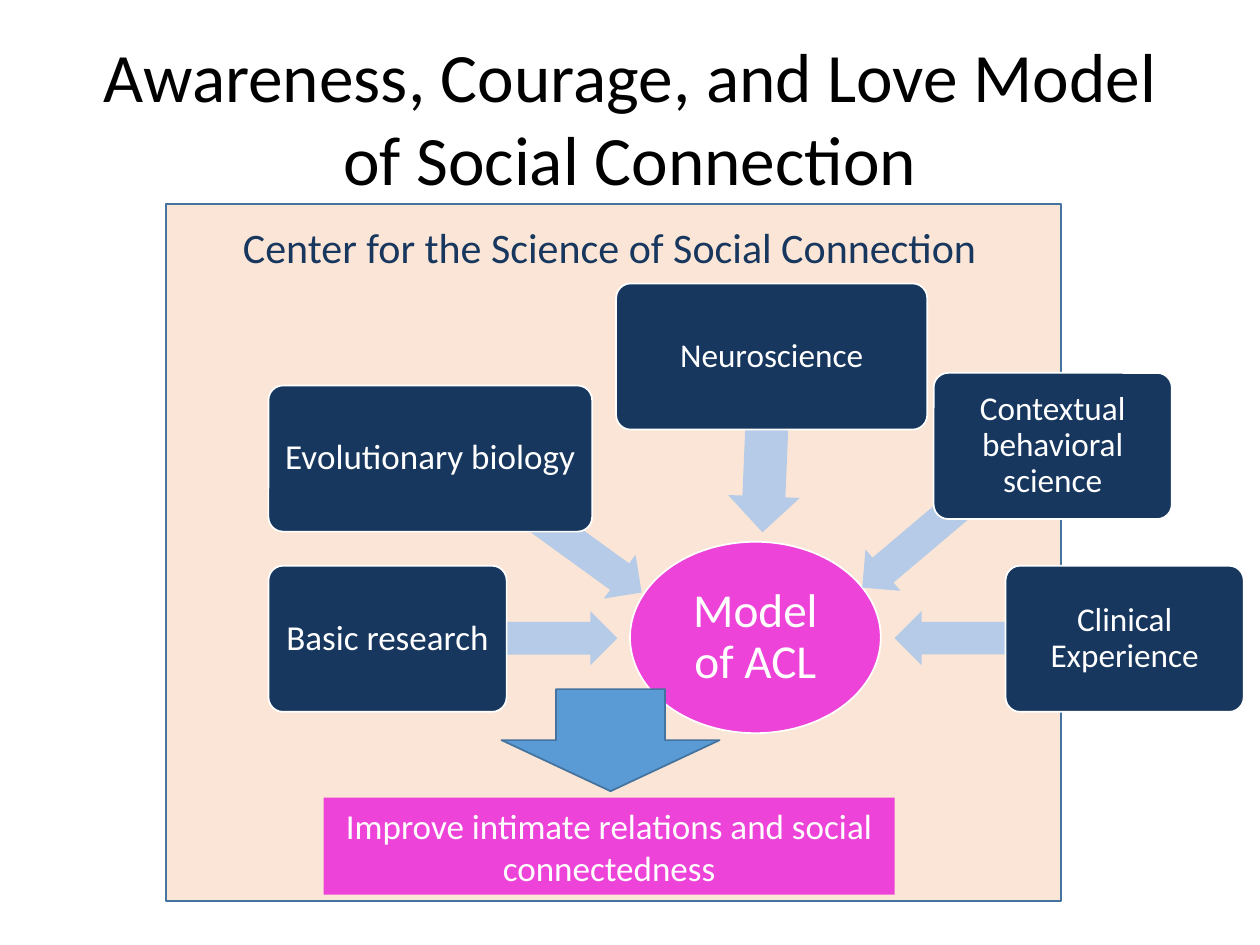
"""Builds the Awareness, Courage, and Love model slide."""
from dataclasses import dataclass

from pptx import Presentation
from pptx.dml.color import RGBColor
from pptx.enum.shapes import MSO_SHAPE
from pptx.enum.text import MSO_ANCHOR, PP_ALIGN
from pptx.util import Pt


@dataclass(frozen=True)
class Theme:
    font: str = "Calibri"
    black: str = "000000"
    white: str = "FFFFFF"
    navy: str = "17375E"
    pink: str = "ED43D9"
    peach: str = "FBE5D6"
    pale_blue: str = "B5CBE7"
    blue: str = "5B9BD5"
    outline: str = "43739E"
    title_size: float = 39.6
    model_size: float = 27
    heading_size: float = 24
    label_size: float = 20
    small_label_size: float = 19


THEME = Theme()
SOURCE_HEIGHT = 83.5
SOURCES = [
    ("Basic research", (153.4, 323.3, 136.1), THEME.label_size, (221.8, 349.2, 131, 31), 180),
    ("Evolutionary biology", (153.4, 220.3, 185), THEME.label_size, (231.8, 279.4, 149, 31), 215.9),
    ("Neuroscience", (352.1, 162, 177.8), THEME.small_label_size, (387.4, 233.3, 100.8, 41), 272.4),
    ("Contextual behavioral science", (533.5, 213.1, 136.1), THEME.small_label_size,
     (475.9, 274.3, 142.6, 31), 319.8),
    ("Clinical Experience", (574.6, 323.3, 136.1), THEME.small_label_size, (511.2, 349.2, 131.8, 31), 0),
]


def write(frame, text, size, color, spacing=None, margins=(7.2, 3.6), anchor=MSO_ANCHOR.MIDDLE):
    """Put one centred, wrapped paragraph into a text frame."""
    frame.word_wrap = True
    frame.vertical_anchor = anchor
    frame.margin_left = frame.margin_right = Pt(margins[0])
    frame.margin_top = frame.margin_bottom = Pt(margins[1])
    paragraph = frame.paragraphs[0]
    paragraph.text = text
    paragraph.alignment = PP_ALIGN.CENTER
    paragraph.line_spacing = spacing
    paragraph.font.name = THEME.font
    paragraph.font.size = Pt(size)
    paragraph.font.color.rgb = RGBColor.from_string(color)


def add_figure(slide, preset, bounds, fill, line=None):
    """Add a flat filled shape, outlined when a line colour is given."""
    figure = slide.shapes.add_shape(preset, *map(Pt, bounds))
    figure.shadow.inherit = False
    figure.fill.solid()
    figure.fill.fore_color.rgb = RGBColor.from_string(fill)
    if line:
        figure.line.color.rgb = RGBColor.from_string(line)
        figure.line.width = Pt(1)
    else:
        figure.line.fill.background()
    return figure


def add_title(slide, text):
    """Place and format the slide title."""
    title = slide.shapes.title
    title.left, title.top, title.width, title.height = map(Pt, (36, 21.6, 648, 90))
    write(title.text_frame, text, THEME.title_size, THEME.black)


def add_source(slide, label, place, size, arrow_bounds, angle):
    """Add a contributing field and its arrow towards the model."""
    arrow = add_figure(slide, MSO_SHAPE.LEFT_ARROW, arrow_bounds, THEME.pale_blue)
    arrow.adjustments[0], arrow.adjustments[1] = 0.6, 0.5
    arrow.rotation = angle
    field = add_figure(slide, MSO_SHAPE.ROUNDED_RECTANGLE, (*place, SOURCE_HEIGHT),
                       THEME.navy, THEME.white)
    field.adjustments[0] = 0.1
    write(field.text_frame, label, size, THEME.white, 0.9, (3, 3))


def add_heading(slide, text):
    """Add the heading of the panel."""
    heading = slide.shapes.add_textbox(*map(Pt, (120.2, 123.8, 456.5, 34.6)))
    write(heading.text_frame, text, THEME.heading_size, THEME.navy,
          margins=(5, 2.9), anchor=MSO_ANCHOR.TOP)


def main():
    """Build and save the slide."""
    deck = Presentation()
    deck.slide_width, deck.slide_height = Pt(720), Pt(540)
    slide = deck.slides.add_slide(deck.slide_layouts[5])
    add_title(slide, "Awareness, Courage, and Love Model of Social Connection")
    add_figure(slide, MSO_SHAPE.RECTANGLE, (95, 116.6, 511.2, 398.2), THEME.peach, THEME.outline)
    model = add_figure(slide, MSO_SHAPE.OVAL, (360, 309.6, 143.3, 109.4), THEME.pink, THEME.white)
    write(model.text_frame, "Model of ACL", THEME.model_size, THEME.white, 0.9, (1.5, 1.5))
    for source in SOURCES:
        add_source(slide, *source)
    add_figure(slide, MSO_SHAPE.DOWN_ARROW, (286.6, 393.8, 124.6, 58.3), THEME.blue, THEME.outline)
    outcome = add_figure(slide, MSO_SHAPE.RECTANGLE, (185, 455.8, 326.2, 55.4), THEME.pink)
    write(outcome.text_frame, "Improve intimate relations and social connectedness",
          THEME.label_size, THEME.white)
    add_heading(slide, "Center for the Science of Social Connection")
    deck.save("out.pptx")


if __name__ == "__main__":
    main()
